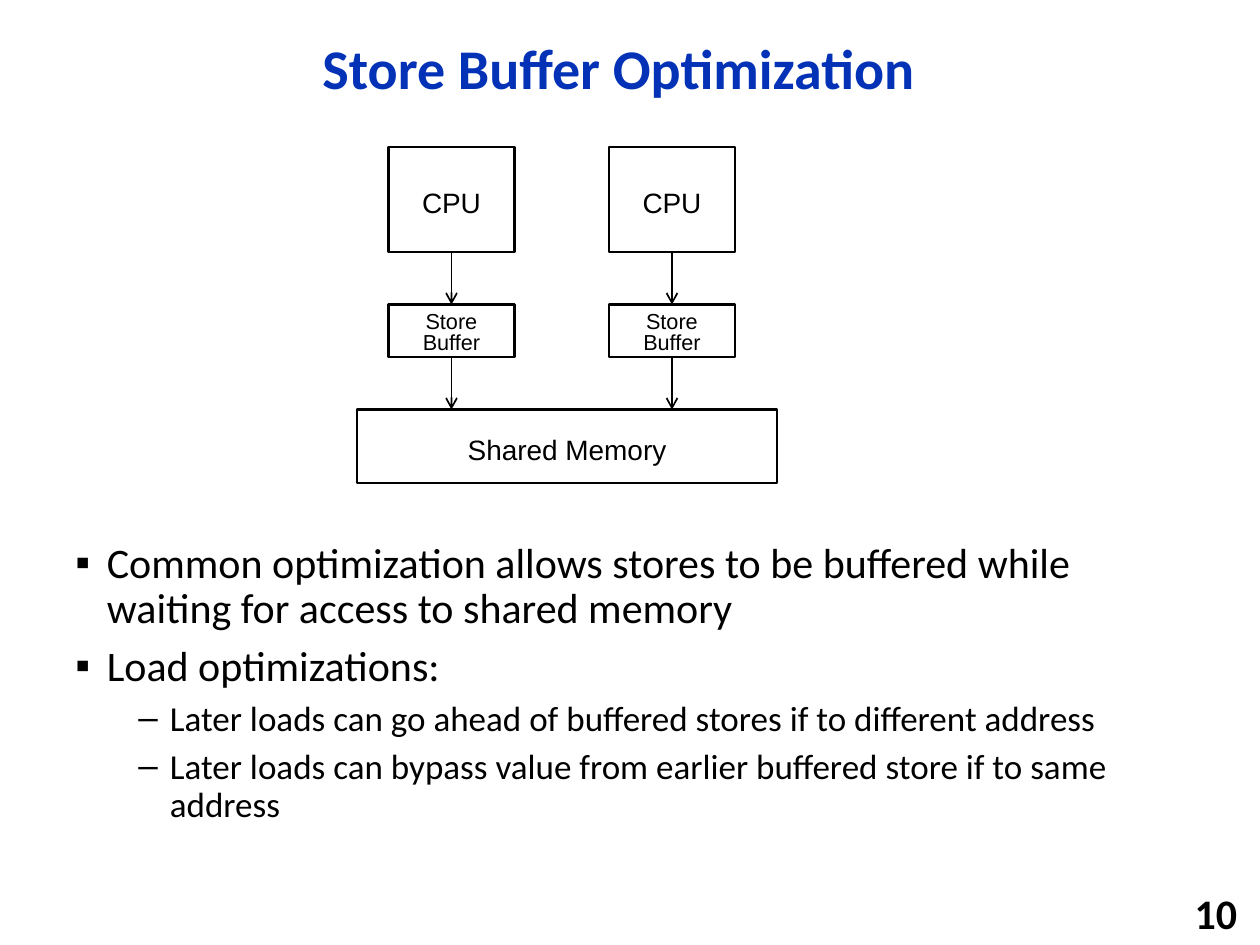
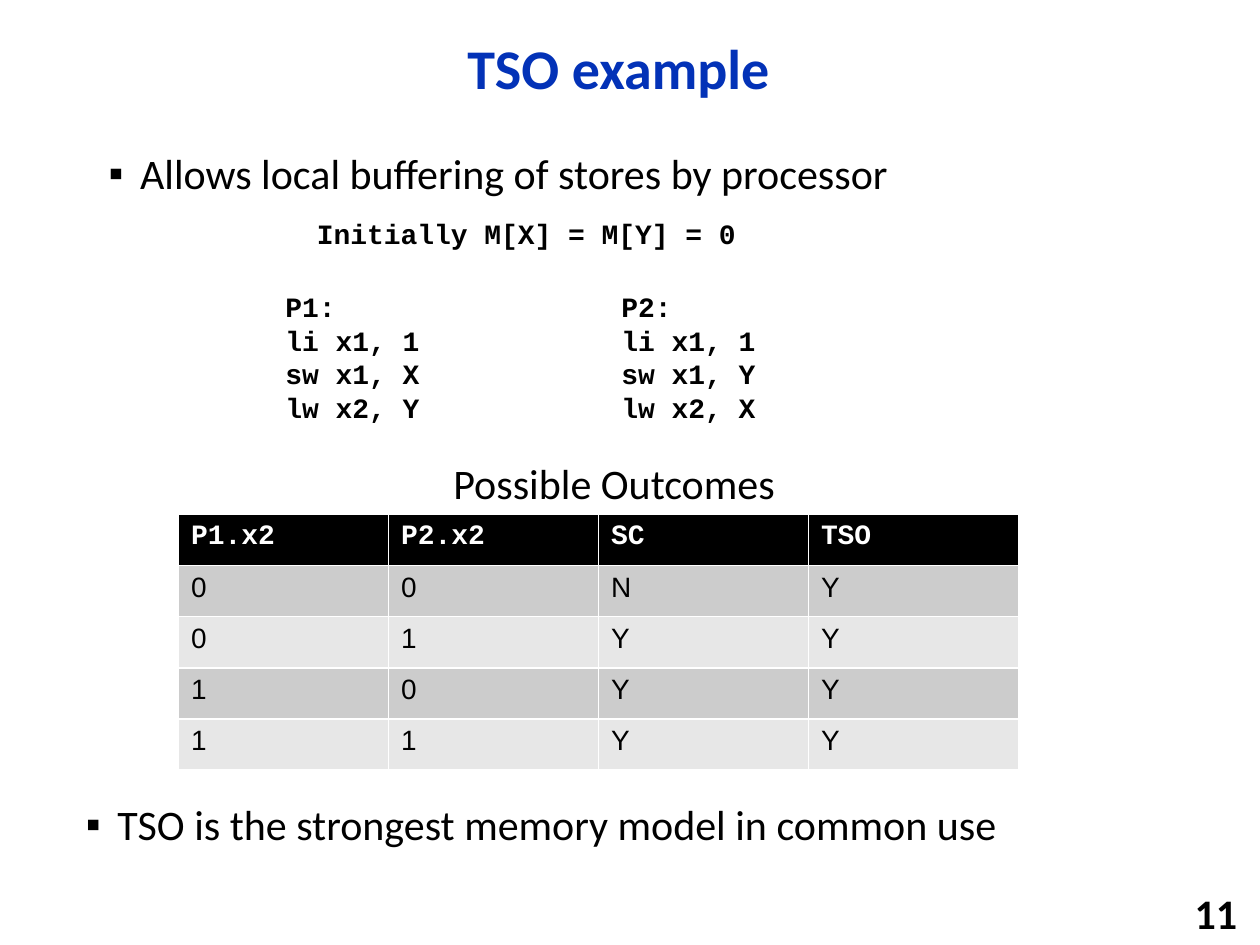
from dataclasses import dataclass

from lxml.etree import SubElement
from pptx import Presentation
from pptx.dml.color import RGBColor as Color
from pptx.enum.shapes import MSO_CONNECTOR as Connector, MSO_SHAPE as Preset
from pptx.enum.text import MSO_ANCHOR as Anchor, MSO_AUTO_SIZE as AutoSize, PP_ALIGN as Align
from pptx.oxml.ns import qn
from pptx.util import Pt


@dataclass(frozen=True)
class Theme:
    title_color = Color.from_string("0332B7")
    black = Color.from_string("000000")
    white = Color.from_string("FFFFFF")
    bands = (Color.from_string("CCCCCC"), Color.from_string("E7E7E7"))
    text_font = "Calibri"
    label_font = "Arial"
    code_font = "Courier New"
    title_size = 32
    body_sizes = (24, 20)
    label_size = 16
    small_label_size = 12.4
    body_line_spacing = 0.9
    body_space_ratio = 0.3
    bullets = ("▪", "–")
    bullet_indents = (18, 54)
    bullet_hang = 18


@dataclass(frozen=True)
class Box:
    left: float
    top: float
    width: float
    height: float

    def lengths(self):
        return Pt(self.left), Pt(self.top), Pt(self.width), Pt(self.height)


THEME = Theme()
TITLE_BOX = Box(66, 12, 575, 58)
NUMBER_BOX = Box(564, 510, 150, 23)


def format_paragraph(paragraph, font, size, color=THEME.black, bold=False, align=None):
    paragraph.alignment = align
    for run in paragraph.runs:
        run.font.name = font
        run.font.size = Pt(size)
        run.font.bold = bold
        run.font.color.rgb = color


def add_text(slide, box, text, font, size, bold=False, align=None, anchor=Anchor.TOP, wrap=True):
    text_frame = slide.shapes.add_textbox(*box.lengths()).text_frame
    text_frame.word_wrap = wrap
    text_frame.vertical_anchor = anchor
    text_frame.text = text
    for paragraph in text_frame.paragraphs:
        format_paragraph(paragraph, font, size, bold=bold, align=align)


def add_titled_slide(presentation, title, number):
    slide = presentation.slides.add_slide(presentation.slide_layouts[5])
    shape = slide.shapes.title
    shape.left, shape.top, shape.width, shape.height = TITLE_BOX.lengths()
    text_frame = shape.text_frame
    text_frame.text = title
    text_frame.auto_size = AutoSize.NONE
    text_frame.vertical_anchor = Anchor.MIDDLE
    paragraph = text_frame.paragraphs[0]
    paragraph.line_spacing = THEME.body_line_spacing
    format_paragraph(paragraph, THEME.text_font, THEME.title_size, THEME.title_color, True, Align.CENTER)
    add_text(slide, NUMBER_BOX, str(number), THEME.text_font, THEME.body_sizes[0],
             bold=True, align=Align.RIGHT, anchor=Anchor.MIDDLE)
    return slide


def add_bullets(slide, box, items):
    """Write (level, text) pairs as a bulleted list."""
    text_frame = slide.shapes.add_textbox(*box.lengths()).text_frame
    text_frame.word_wrap = True
    for index, (level, text) in enumerate(items):
        paragraph = text_frame.add_paragraph() if index else text_frame.paragraphs[0]
        paragraph.text = text
        paragraph.level = level
        paragraph.line_spacing = THEME.body_line_spacing
        size = THEME.body_sizes[level]
        if index:
            paragraph.space_before = Pt(size * THEME.body_space_ratio)
        format_paragraph(paragraph, THEME.text_font, size)
        properties = paragraph._p.get_or_add_pPr()
        properties.set("marL", str(Pt(THEME.bullet_indents[level])))
        properties.set("indent", str(-Pt(THEME.bullet_hang)))
        SubElement(properties, qn("a:buFont"), typeface=THEME.label_font)
        SubElement(properties, qn("a:buChar"), char=THEME.bullets[level])


def add_block(slide, box, label, size=THEME.label_size, line_spacing=None):
    shape = slide.shapes.add_shape(Preset.RECTANGLE, *box.lengths())
    shape.shadow.inherit = False
    shape.fill.solid()
    shape.fill.fore_color.rgb = THEME.white
    shape.line.color.rgb = THEME.black
    shape.line.width = Pt(1.5)
    text_frame = shape.text_frame
    text_frame.text = label
    text_frame.word_wrap = True
    text_frame.vertical_anchor = Anchor.MIDDLE
    text_frame.margin_bottom = 0
    paragraph = text_frame.paragraphs[0]
    paragraph.line_spacing = line_spacing
    format_paragraph(paragraph, THEME.label_font, size, align=Align.CENTER)


def add_down_arrow(slide, x, top, bottom):
    connector = slide.shapes.add_connector(Connector.STRAIGHT, Pt(x), Pt(top), Pt(x), Pt(bottom))
    connector.line.color.rgb = THEME.black
    connector.line.width = Pt(1)
    SubElement(connector.line._get_or_add_ln(), qn("a:tailEnd"), type="arrow")
    SubElement(connector._element.spPr, qn("a:effectLst"))


def add_memory_diagram(slide, box):
    """Two processors, each with its store buffer, above one shared memory."""
    block_width, cpu_height, buffer_height, memory_height = 72, 60, 30, 42
    side_margin, column_step = 18, 126
    gap = (box.height - cpu_height - buffer_height - memory_height) / 2
    cpu_bottom = box.top + cpu_height
    buffer_top = cpu_bottom + gap
    buffer_bottom = buffer_top + buffer_height
    memory_top = buffer_bottom + gap
    add_block(slide, Box(box.left, memory_top, box.width, memory_height), "Shared Memory")
    for column in range(2):
        left = box.left + side_margin + column * column_step
        center = left + block_width / 2
        add_block(slide, Box(left, box.top, block_width, cpu_height), "CPU")
        add_block(slide, Box(left, buffer_top, block_width, buffer_height), "Store Buffer",
                  THEME.small_label_size, 0.8)
        add_down_arrow(slide, center, cpu_bottom, buffer_top)
        add_down_arrow(slide, center, buffer_bottom, memory_top)


def add_programs(slide, box):
    """The initial state, with the code of both processors below it."""
    code_style = dict(font=THEME.code_font, size=THEME.label_size, bold=True)
    add_text(slide, Box(box.left + 18, box.top, 264, 27), "Initially M[X] = M[Y] = 0", **code_style)
    for index, (stored, loaded) in enumerate(("XY", "YX")):
        code = f"P{index + 1}:\nli x1, 1\nsw x1, {stored}\nlw x2, {loaded}"
        program_box = Box(box.left + index * 192, box.top + 42, 132, box.height - 42)
        add_text(slide, program_box, code, **code_style)


def add_outcomes(slide, box):
    caption_height = 36
    add_text(slide, Box(box.left + 150, box.top, 201, caption_height), "Possible Outcomes",
             THEME.text_font, THEME.body_sizes[0], wrap=False)
    rows = (("P1.x2", "P2.x2", "SC", "TSO"), "00NY", "01YY", "10YY", "11YY")
    table_box = Box(box.left, box.top + caption_height, box.width, box.height - caption_height)
    table = slide.shapes.add_table(len(rows), len(rows[0]), *table_box.lengths()).table
    for row_index, values in enumerate(rows):
        header = row_index == 0
        fill = THEME.black if header else THEME.bands[(row_index - 1) % 2]
        for column_index, value in enumerate(values):
            cell = table.cell(row_index, column_index)
            cell.text = value
            cell.fill.solid()
            cell.fill.fore_color.rgb = fill
            format_paragraph(cell.text_frame.paragraphs[0],
                             THEME.code_font if header else THEME.label_font, THEME.label_size,
                             THEME.white if header else THEME.black, header)


def build_store_buffer_slide(presentation):
    slide = add_titled_slide(presentation, "Store Buffer Optimization", 10)
    add_memory_diagram(slide, Box(204, 84, 240, 192))
    add_bullets(slide, Box(36, 306, 648, 176), (
        (0, "Common optimization allows stores to be buffered while waiting for access to shared memory"),
        (0, "Load optimizations:"),
        (1, "Later loads can go ahead of buffered stores if to different address"),
        (1, "Later loads can bypass value from earlier buffered store if to same address"),
    ))


def build_tso_slide(presentation):
    slide = add_titled_slide(presentation, "TSO example", 11)
    add_bullets(slide, Box(55, 84, 605, 54), ((0, "Allows local buffering of stores by processor"),))
    add_programs(slide, Box(156, 120, 324, 127))
    add_outcomes(slide, Box(102, 258, 480, 182))
    add_bullets(slide, Box(42, 456, 605, 54), ((0, "TSO is the strongest memory model in common use"),))


def main():
    presentation = Presentation()
    presentation.slide_width, presentation.slide_height = Pt(720), Pt(540)
    build_store_buffer_slide(presentation)
    build_tso_slide(presentation)
    presentation.save("out.pptx")


if __name__ == "__main__":
    main()
